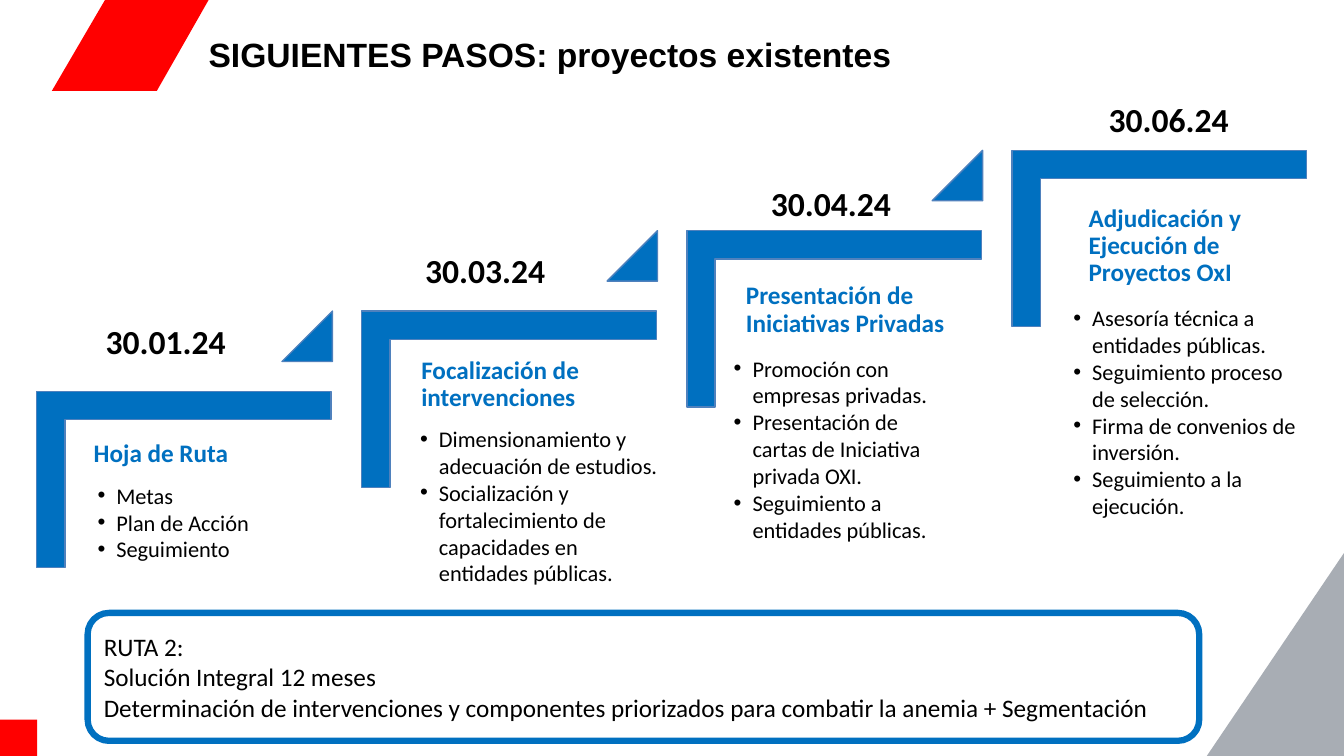
import lxml.etree
import pptx
import pptx.dml.color
import pptx.enum.shapes
import pptx.enum.text
import pptx.oxml.ns
import pptx.util

Pt = pptx.util.Pt
SHAPE = pptx.enum.shapes.MSO_SHAPE
ANCHOR = pptx.enum.text.MSO_ANCHOR
AUTO_SIZE = pptx.enum.text.MSO_AUTO_SIZE
RGBColor = pptx.dml.color.RGBColor

RED = RGBColor(0xFF, 0x00, 0x00)
GREY = RGBColor(0xA8, 0xAD, 0xB4)
BLUE = RGBColor(0x00, 0x70, 0xC0)
EDGE_BLUE = RGBColor(0x4F, 0x81, 0xBD)
BLACK = RGBColor(0x00, 0x00, 0x00)

STEP_RIGHT, STEP_UP = 232.2, 57.4
INDENT = 13.5

# Each step: date, heading and tasks, every one with its box.
STEPS = [
    (("30.01.24", (68.4, 225.4, 105, 36)),
     ("Hoja de Ruta", (61.9, 309.6, 190, 166)),
     (["Metas", "Plan de Acción", "Seguimiento"], (62.6, 340.6, 139, 85))),
    (("30.03.24", (296.6, 175, 105, 36)),
     ("Focalización de intervenciones", (295.9, 250.6, 190, 166)),
     (["Dimensionamiento y adecuación de estudios.",
       "Socialización y fortalecimiento de capacidades en entidades públicas."],
      (293, 300.2, 185.8, 124))),
    (("30.04.24", (543.6, 127.4, 105, 36)),
     ("Presentación de Iniciativas Privadas", (527.8, 197.3, 190, 166)),
     (["Promoción con empresas privadas.",
       "Presentación de cartas de Iniciativa privada OXI.",
       "Seguimiento a entidades públicas."], (517, 249.8, 157, 143.3))),
    (("30.06.24", (784.8, 67, 105, 36)),
     ("Adjudicación y Ejecución de Proyectos OxI", (772.6, 141.8, 132.5, 166)),
     (["Asesoría técnica a entidades públicas.",
       "Seguimiento proceso de selección.",
       "Firma de convenios de inversión.",
       "Seguimiento a la ejecución."], (759.6, 213.8, 174.2, 162.7))),
]
ROUTE = [
    "RUTA 2:",
    "Solución Integral 12 meses",
    "Determinación de intervenciones y componentes priorizados para combatir la anemia + Segmentación",
]


def paint(shape, fill=None, line=None, width=1):
    shape.shadow.inherit = False
    if fill is None:
        shape.fill.background()
    else:
        shape.fill.solid()
        shape.fill.fore_color.rgb = fill
    if line is None:
        shape.line.fill.background()
    else:
        shape.line.color.rgb = line
        shape.line.width = Pt(width)


def add_preset(slide, kind, box, fill=None, line=None, width=1):
    shape = slide.shapes.add_shape(kind, *map(Pt, box))
    paint(shape, fill, line, width)
    return shape


def add_polygon(slide, corners, fill):
    outline = slide.shapes.build_freeform(*corners[0], scale=Pt(1))
    outline.add_line_segments(corners[1:], close=True)
    paint(outline.convert_to_shape(), fill)


def add_bullet(paragraph):
    properties = paragraph._p.get_or_add_pPr()
    properties.set("marL", str(Pt(INDENT)))
    properties.set("indent", str(-Pt(INDENT)))
    for tag, name, value in (("a:buFont", "typeface", "Arial"), ("a:buChar", "char", "•")):
        lxml.etree.SubElement(properties, pptx.oxml.ns.qn(tag)).set(name, value)


def write(frame, lines, size, color=BLACK, bold=False, font="Calibri",
          bullets=False, spacing=None, align=pptx.enum.text.PP_ALIGN.LEFT):
    frame.word_wrap = True
    for index, line in enumerate(lines):
        paragraph = frame.add_paragraph() if index else frame.paragraphs[0]
        if bullets:
            add_bullet(paragraph)
        paragraph.text = line
        paragraph.alignment = align
        paragraph.line_spacing = spacing
        paragraph.font.name = font
        paragraph.font.size = Pt(size)
        paragraph.font.bold = bold
        paragraph.font.color.rgb = color


def add_text(slide, box, lines, size, insets=(7.2, 3.6), anchor=ANCHOR.TOP,
             auto_size=AUTO_SIZE.NONE, **style):
    """Add a text box; insets are (left and right, top and bottom)."""
    frame = slide.shapes.add_textbox(*map(Pt, box)).text_frame
    frame.margin_left = frame.margin_right = Pt(insets[0])
    frame.margin_top = frame.margin_bottom = Pt(insets[1])
    frame.vertical_anchor = anchor
    write(frame, lines, size, **style)
    frame.auto_size = auto_size


def add_background(slide):
    add_preset(slide, SHAPE.RECTANGLE, (0, 514, 26.5, 26), RED)
    add_polygon(slide, [(149, 0), (74.7, 0), (37.4, 65.3), (111.8, 65.3)], RED)
    add_polygon(slide, [(861.8, 540), (960, 540), (960, 395.3)], GREY)


def add_step(slide, index, date, heading, tasks):
    right, up = index * STEP_RIGHT, index * STEP_UP
    stair = add_preset(slide, SHAPE.CORNER, (68.4 + right, 237.4 - up, 126, 210.3),
                       BLUE, EDGE_BLUE)
    stair.rotation = 90
    stair.adjustments[0] = stair.adjustments[1] = 0.16
    if index < len(STEPS) - 1:
        rise = add_preset(slide, SHAPE.ISOSCELES_TRIANGLE,
                          (201.5 + right, 222.2 - up, 36, 36), BLUE, EDGE_BLUE)
        rise.adjustments[0] = 1
    add_text(slide, heading[1], [heading[0]], 18, insets=(5, 5),
             color=BLUE, bold=True, spacing=0.9)
    add_text(slide, tasks[1], tasks[0], 16, bullets=True,
             auto_size=AUTO_SIZE.SHAPE_TO_FIT_TEXT)
    add_text(slide, date[1], [date[0]], 24, bold=True,
             auto_size=AUTO_SIZE.SHAPE_TO_FIT_TEXT)


def add_route(slide):
    route = add_preset(slide, SHAPE.ROUNDED_RECTANGLE, (62.6, 437.8, 794, 91.4),
                       line=BLUE, width=4.5)
    route.text_frame.vertical_anchor = ANCHOR.MIDDLE
    write(route.text_frame, ROUTE, 18, align=pptx.enum.text.PP_ALIGN.JUSTIFY)


def main():
    presentation = pptx.Presentation()
    presentation.slide_width, presentation.slide_height = Pt(960), Pt(540)
    slide = presentation.slides.add_slide(presentation.slide_layouts[6])
    add_background(slide)
    add_text(slide, (144.7, 7.2, 633.6, 66.2), ["SIGUIENTES PASOS: proyectos existentes"],
             24, insets=(4.3, 2.2), anchor=ANCHOR.MIDDLE, bold=True, font="Arial", spacing=0.9)
    for index, step in enumerate(STEPS):
        add_step(slide, index, *step)
    add_route(slide)
    presentation.save("out.pptx")


if __name__ == "__main__":
    main()
